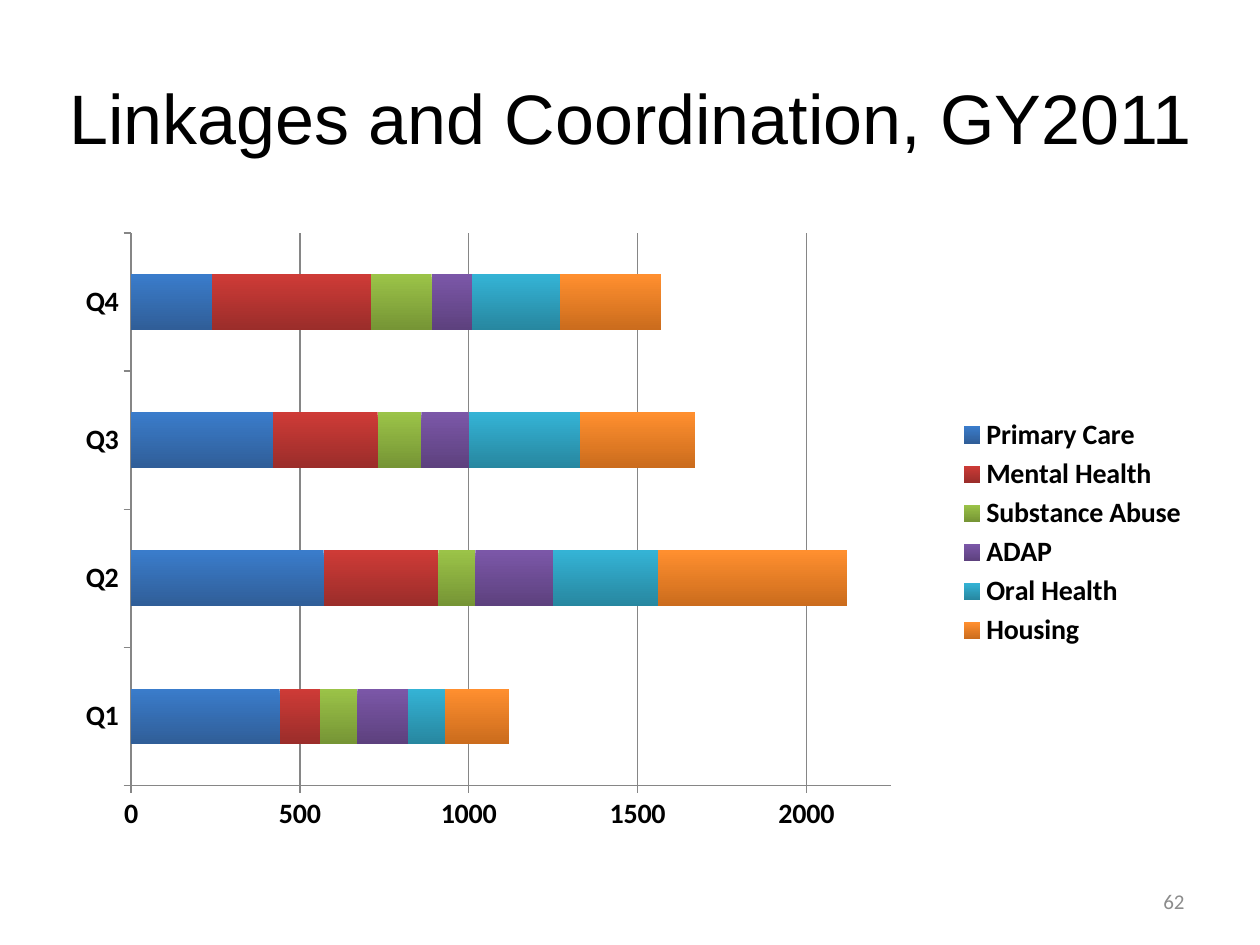
from dataclasses import dataclass

from lxml.etree import SubElement
from pptx import Presentation
from pptx.chart.data import CategoryChartData
from pptx.dml.color import RGBColor
from pptx.enum.chart import XL_CHART_TYPE, XL_LEGEND_POSITION, XL_TICK_MARK
from pptx.enum.text import MSO_ANCHOR, PP_ALIGN
from pptx.oxml.ns import qn
from pptx.util import Emu, Inches, Pt

BLACK = RGBColor(0, 0, 0)
GRAY = RGBColor(0x8C, 0x8C, 0x8C)
AXIS = RGBColor(0x86, 0x86, 0x86)


@dataclass
class Box:
    left: int
    top: int
    width: int
    height: int


@dataclass
class Group:
    name: str
    vals: tuple
    light: RGBColor
    dark: RGBColor


QUARTERS = ("Q1", "Q2", "Q3", "Q4")
GROUPS = (
    Group("Primary Care", (440, 570, 420, 240),
          RGBColor(0x3A, 0x7C, 0xCB), RGBColor(0x30, 0x5E, 0x98)),
    Group("Mental Health", (120, 340, 310, 470),
          RGBColor(0xCE, 0x3B, 0x37), RGBColor(0x9B, 0x2D, 0x2A)),
    Group("Substance Abuse", (110, 110, 130, 180),
          RGBColor(0x9B, 0xC3, 0x48), RGBColor(0x76, 0x95, 0x35)),
    Group("ADAP", (150, 230, 140, 120),
          RGBColor(0x7B, 0x57, 0xA8), RGBColor(0x5D, 0x41, 0x7E)),
    Group("Oral Health", (110, 310, 330, 260),
          RGBColor(0x34, 0xB3, 0xD5), RGBColor(0x27, 0x87, 0xA0)),
    Group("Housing", (190, 560, 340, 300),
          RGBColor(0xFF, 0x8F, 0x2F), RGBColor(0xCB, 0x6C, 0x1D)),
)

TITLE = Box(32, 38, 1197, 157)
NUMBER = Box(903, 876, 294, 50)
CHART = Box(63, 220, 1134, 624)
PLOT = Box(131, 233, 760, 552)
LEGEND = Box(953, 413, 238, 240)


def px(count: int) -> Emu:
    return Emu(round(count * 914400 / 126))


def place(box: Box) -> tuple:
    return px(box.left), px(box.top), px(box.width), px(box.height)


def write(shape, text: str, *, size: int, font: str, color: RGBColor,
          align: PP_ALIGN) -> None:
    frame = shape.text_frame
    frame.word_wrap = True
    frame.vertical_anchor = MSO_ANCHOR.MIDDLE
    para = frame.paragraphs[0]
    para.alignment = align
    run = para.add_run()
    run.text = text
    run.font.size = Pt(size)
    run.font.name = font
    run.font.color.rgb = color


def pin(parent, index: int, box: Box, inner: bool = False) -> None:
    """Fix a chart part to a box within the chart frame."""
    for old in parent.findall(qn("c:layout")):
        parent.remove(old)
    layout = SubElement(parent, qn("c:layout"))
    parent.insert(index, layout)
    manual = SubElement(layout, qn("c:manualLayout"))
    rules = {"layoutTarget": "inner"} if inner else {}
    rules |= {
        "xMode": "edge", "yMode": "edge",
        "x": round((box.left - CHART.left) / CHART.width, 3),
        "y": round((box.top - CHART.top) / CHART.height, 3),
        "w": round(box.width / CHART.width, 3),
        "h": round(box.height / CHART.height, 3),
    }
    for tag, value in rules.items():
        SubElement(manual, qn(f"c:{tag}")).set("val", str(value))


def rule(line) -> None:
    line.color.rgb = AXIS
    line.width = Pt(0.75)


def graph(slide) -> None:
    data = CategoryChartData()
    data.categories = QUARTERS
    for group in GROUPS:
        data.add_series(group.name, group.vals)
    chart = slide.shapes.add_chart(
        XL_CHART_TYPE.BAR_STACKED, *place(CHART), data).chart
    chart.has_title = False
    chart.font.name = "Calibri"
    chart.font.size = Pt(16)
    chart.font.bold = True
    chart.font.color.rgb = BLACK

    # Bars, shaded from light at the top to dark at the bottom
    plot = chart.plots[0]
    plot.gap_width = 150
    plot.overlap = 100
    plot.vary_by_categories = False
    for series, group in zip(plot.series, GROUPS):
        fill = series.format.fill
        fill.gradient()
        fill.gradient_angle = 270
        for stop, color in zip(fill.gradient_stops, (group.light, group.dark)):
            stop.color.rgb = color

    # Axes
    for axis in (chart.category_axis, chart.value_axis):
        axis.major_tick_mark = XL_TICK_MARK.OUTSIDE
        axis.minor_tick_mark = XL_TICK_MARK.NONE
        rule(axis.format.line)
    scale = chart.value_axis
    scale.minimum_scale = 0
    scale.maximum_scale = 2250
    scale.major_unit = 500
    scale.has_major_gridlines = True
    rule(scale.major_gridlines.format.line)

    # Legend and layout
    chart.has_legend = True
    chart.legend.position = XL_LEGEND_POSITION.RIGHT
    chart.legend.include_in_layout = False
    area = chart._chartSpace.find(qn("c:chart")).find(qn("c:plotArea"))
    pin(area, 0, PLOT, inner=True)
    pin(chart.legend._element, 1, LEGEND)


def main() -> None:
    deck = Presentation()
    deck.slide_width, deck.slide_height = Inches(10), Inches(7.5)
    slide = deck.slides.add_slide(deck.slide_layouts[5])

    # Title
    title = slide.shapes.title
    title.left, title.top, title.width, title.height = place(TITLE)
    write(title, "Linkages and Coordination, GY2011", size=40, font="Arial",
          color=BLACK, align=PP_ALIGN.CENTER)

    # Slide number
    write(slide.shapes.add_textbox(*place(NUMBER)), "62", size=12,
          font="Calibri", color=GRAY, align=PP_ALIGN.RIGHT)

    graph(slide)
    deck.save("out.pptx")


if __name__ == "__main__":
    main()
